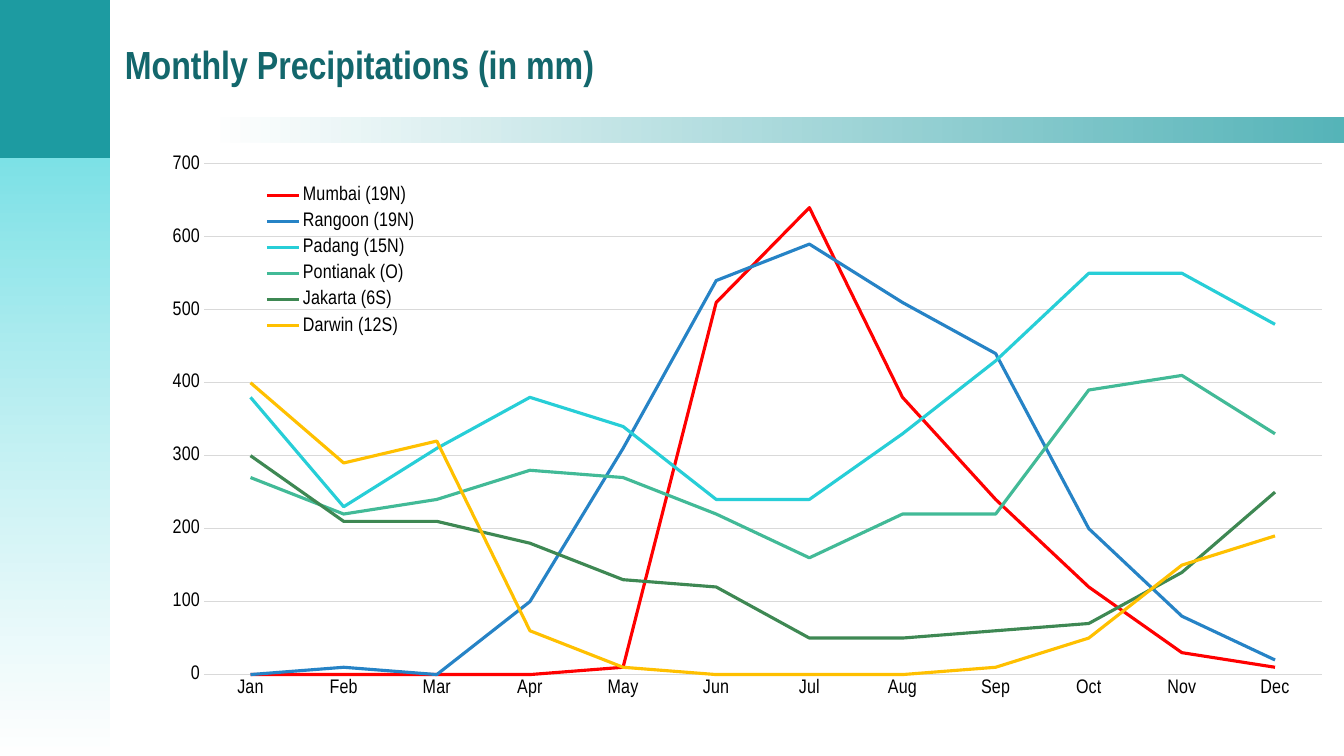
from dataclasses import dataclass

from lxml import etree
from pptx import Presentation
from pptx.chart.data import CategoryChartData
from pptx.dml.color import RGBColor
from pptx.enum.chart import XL_CHART_TYPE, XL_LEGEND_POSITION, XL_TICK_MARK
from pptx.enum.shapes import MSO_SHAPE
from pptx.enum.text import MSO_ANCHOR
from pptx.oxml.ns import qn
from pptx.util import Cm, Pt

RECTANGLE = MSO_SHAPE.RECTANGLE
MIDDLE = MSO_ANCHOR.MIDDLE
LINE_CHART = XL_CHART_TYPE.LINE
LEGEND_RIGHT = XL_LEGEND_POSITION.RIGHT
NO_TICK = XL_TICK_MARK.NONE

FONT = "Arial Narrow"
TEAL = "1D9BA1"
GRID = "D9D9D9"
MONTHS = ("Jan", "Feb", "Mar", "Apr", "May", "Jun",
          "Jul", "Aug", "Sep", "Oct", "Nov", "Dec")


@dataclass(frozen=True)
class Box:
    left: float
    top: float
    width: float
    height: float

    def lengths(self) -> tuple:
        return Cm(self.left), Cm(self.top), Cm(self.width), Cm(self.height)


@dataclass(frozen=True)
class Stop:
    color: str
    opacity: int = 100


@dataclass(frozen=True)
class Panel:
    box: Box
    stops: tuple
    angle: int = 0


@dataclass(frozen=True)
class City:
    name: str
    color: str
    rainfall: tuple


PANELS = (
    Panel(Box(-0.05, -0.03, 2.82, 4.01), (Stop(TEAL),)),
    Panel(Box(-0.05, 3.99, 2.82, 15.06), (Stop("7DE2E7"), Stop("FFFFFF", 75)), 270),
    Panel(Box(5.31, 2.95, 28.56, 0.64), (Stop("FFFFFF", 75), Stop(TEAL, 75))),
)

CITIES = (
    City("Mumbai (19N)", "FF0000",
         (0, 0, 0, 0, 10, 510, 640, 380, 240, 120, 30, 10)),
    City("Rangoon (19N)", "2683C6",
         (0, 10, 0, 100, 310, 540, 590, 510, 440, 200, 80, 20)),
    City("Padang (15N)", "27CED7",
         (380, 230, 310, 380, 340, 240, 240, 330, 430, 550, 550, 480)),
    City("Pontianak (O)", "42BA97",
         (270, 220, 240, 280, 270, 220, 160, 220, 220, 390, 410, 330)),
    City("Jakarta (6S)", "3E8853",
         (300, 210, 210, 180, 130, 120, 50, 50, 60, 70, 140, 250)),
    City("Darwin (12S)", "FFC000",
         (400, 290, 320, 60, 10, 0, 0, 0, 10, 50, 150, 190)),
)


def rgb(color: str) -> RGBColor:
    return RGBColor.from_string(color)


def format_font(font, size: float, color: str, bold: bool = False) -> None:
    font.name = FONT
    font.size = Pt(size)
    font.bold = bold
    font.color.rgb = rgb(color)


def format_line(line, color: str, width: float) -> None:
    line.color.rgb = rgb(color)
    line.width = Pt(width)


def add_panel(slide, panel: Panel) -> None:
    shape = slide.shapes.add_shape(RECTANGLE, *panel.box.lengths())
    shape.shadow.inherit = False
    shape.line.fill.background()
    if len(panel.stops) == 1:
        shape.fill.solid()
        shape.fill.fore_color.rgb = rgb(panel.stops[0].color)
        return
    shape.fill.gradient()
    shape.fill.gradient_angle = panel.angle
    for gradient_stop, stop in zip(shape.fill.gradient_stops, panel.stops):
        gradient_stop.color.rgb = rgb(stop.color)
    for color, stop in zip(shape.element.iter(qn("a:srgbClr")), panel.stops):
        if stop.opacity < 100:
            etree.SubElement(color, qn("a:alpha"), val=str(stop.opacity * 1000))


def add_text(slide, text: str, *, box: Box, size: float, color: str, bold: bool) -> None:
    frame = slide.shapes.add_textbox(*box.lengths()).text_frame
    frame.word_wrap = True
    frame.vertical_anchor = MIDDLE
    paragraph = frame.paragraphs[0]
    paragraph.text = text
    format_font(paragraph.font, size, color, bold)


def place_part(part, index: int, box: Box, inner: bool = False) -> None:
    for old_layout in part.findall(qn("c:layout")):
        part.remove(old_layout)
    layout = etree.Element(qn("c:layout"))
    manual = etree.SubElement(layout, qn("c:manualLayout"))
    settings = {"xMode": "edge", "yMode": "edge", "x": box.left, "y": box.top,
                "w": box.width, "h": box.height}
    if inner:
        settings = {"layoutTarget": "inner", **settings}
    for tag, value in settings.items():
        etree.SubElement(manual, qn(f"c:{tag}"), val=str(value))
    part.insert(index, layout)


def add_rainfall_chart(slide, box: Box) -> None:
    data = CategoryChartData(number_format="0")
    data.categories = MONTHS
    for city in CITIES:
        data.add_series(city.name, city.rainfall)
    chart = slide.shapes.add_chart(LINE_CHART, *box.lengths(), data).chart
    chart.has_title = False
    format_font(chart.font, 14, "000000")

    plot = chart.plots[0]
    plot.vary_by_categories = False
    for series, city in zip(plot.series, CITIES):
        series.smooth = False
        format_line(series.format.line, city.color, 2.25)

    months, rainfall = chart.category_axis, chart.value_axis
    for axis in (months, rainfall):
        axis.major_tick_mark = NO_TICK
        axis.minor_tick_mark = NO_TICK
        format_font(axis.tick_labels.font, 14, "000000")
    format_line(months.format.line, GRID, 0.75)
    rainfall.format.line.fill.background()
    format_line(rainfall.major_gridlines.format.line, GRID, 0.75)
    rainfall.minimum_scale = 0
    rainfall.maximum_scale = 700
    rainfall.major_unit = 100

    chart.has_legend = True
    chart.legend.position = LEGEND_RIGHT
    chart.legend.include_in_layout = False
    format_font(chart.legend.font, 14, "000000")
    place_part(next(chart.element.iter(qn("c:plotArea"))), 0,
               Box(0.077, 0.034, 0.923, 0.875), inner=True)
    place_part(next(chart.element.iter(qn("c:legend"))), 1,
               Box(0.11, 0.06, 0.16, 0.28))


def main() -> None:
    presentation = Presentation()
    presentation.slide_width = Cm(33.87)
    presentation.slide_height = Cm(19.05)
    slide = presentation.slides.add_slide(presentation.slide_layouts[6])
    for panel in PANELS:
        add_panel(slide, panel)
    add_text(slide, "Monthly Precipitations (in mm)",
             box=Box(2.9, 0.28, 30.4, 2.64), size=28, color="13676C", bold=True)
    add_rainfall_chart(slide, Box(2.79, 3.63, 30.53, 14.71))
    presentation.save("out.pptx")


if __name__ == "__main__":
    main()
